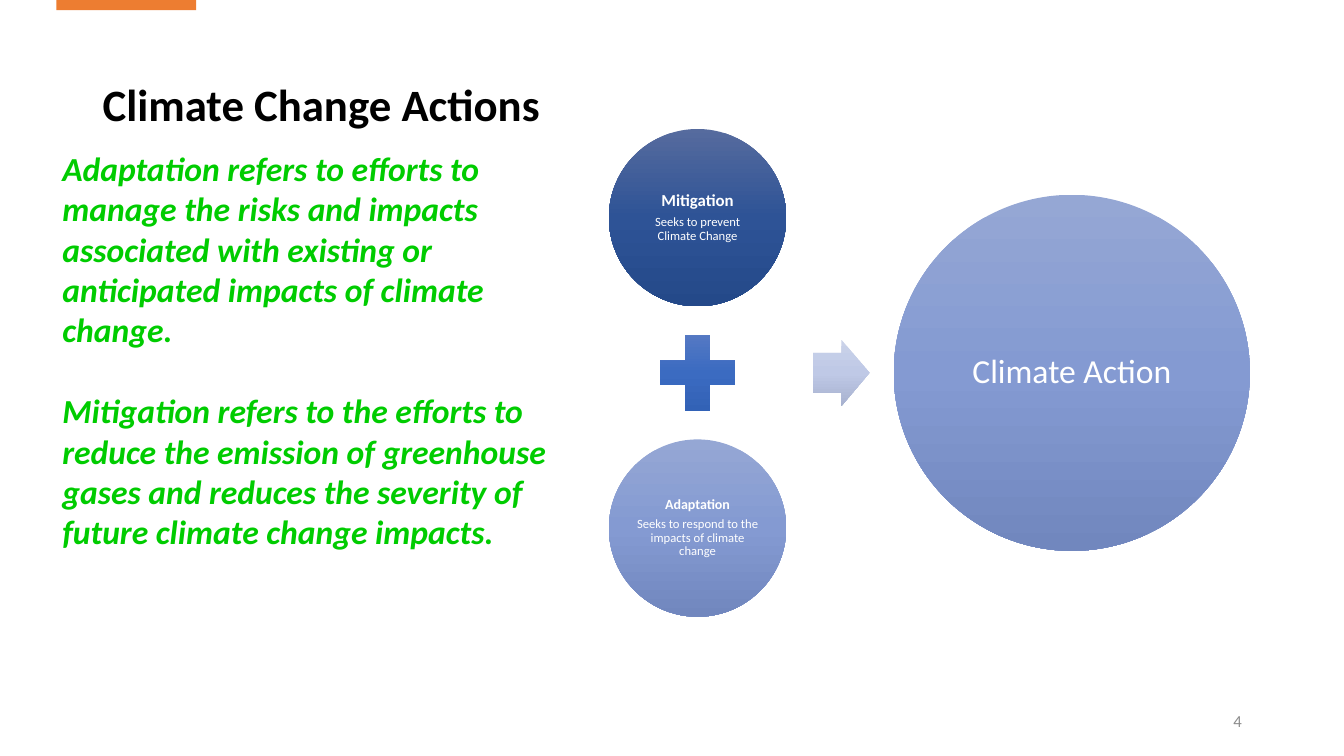
from copy import deepcopy

from pptx import Presentation
from pptx.dml.color import RGBColor as RGB
from pptx.enum.shapes import MSO_SHAPE as SHAPE
from pptx.enum.text import MSO_ANCHOR as ANCHOR, PP_ALIGN as ALIGN
from pptx.oxml.ns import qn
from pptx.util import Inches, Pt

COLORS = {
    "bar": "ED7D31", "title": "000000", "body": "00CC00",
    "number": "8C8C8C", "label": "FFFFFF",
}
# Gradient stops from top to bottom
GRADIENTS = {
    "navy": ("566B9E", "2E5396", "244989"),
    "blue": ("5E7EC4", "3B6BC1", "2F5EB1"),
    "light": ("95A7D4", "849AD2", "7187BE"),
    "pale": ("CAD2E9", "BFC9E6", "A7B1CF"),
}

prs = Presentation()
prs.slide_width, prs.slide_height = Inches(13.33), Inches(7.5)
s = prs.slides.add_slide(prs.slide_layouts[6])
U = prs.slide_width / 100  # square grid: 100 columns, about 56 rows


def cells(*values):
    return [round(v * U) for v in values]


def write(tf, lines, color, align=ALIGN.LEFT, anchor=ANCHOR.MIDDLE,
          spacing=None, italic=False):
    """Fill a text frame with (text, size, bold, space before) lines."""
    tf.word_wrap = True
    tf.vertical_anchor = anchor
    for i, (text, size, bold, before) in enumerate(lines):
        p = tf.add_paragraph() if i else tf.paragraphs[0]
        p.text = text
        p.alignment = align
        p.line_spacing = spacing
        p.space_before = Pt(before)
        p.font.name, p.font.size = "Calibri", Pt(size)
        p.font.bold, p.font.italic = bold, italic
        p.font.color.rgb = RGB.from_string(COLORS[color])


# Accent bar at the top edge
sp = s.shapes.add_shape(SHAPE.RECTANGLE, *cells(4.2, 0, 10.4, 0.75))
sp.shadow.inherit = False
sp.fill.solid()
sp.fill.fore_color.rgb = RGB.from_string(COLORS["bar"])
sp.line.fill.background()

# Title, page number and definitions
title = s.shapes.add_textbox(*cells(6.9, 4.12, 86.25, 7.65))
write(title.text_frame, [("Climate Change Actions", 32, True, 0)], "title", spacing=0.9)

number = s.shapes.add_textbox(*cells(70.65, 52.12, 22.5, 3))
write(number.text_frame, [("4", 12, False, 0)], "number", ALIGN.RIGHT)

body = s.shapes.add_textbox(*cells(3.9, 10.65, 40.4, 38.2))
write(body.text_frame, [
    ("Adaptation refers to efforts to manage the risks and impacts associated with "
     "existing or anticipated impacts of climate change.", 24, True, 0),
    ("Mitigation refers to the efforts to reduce the emission of greenhouse gases and "
     "reduces the severity of future climate change impacts.", 24, True, 29),
], "body", anchor=ANCHOR.TOP, italic=True)

# Diagram: two parts add up to the action, all centred on one axis
AXIS, STEP = 27.75, 11.55
PARTS_X, ARROW_X, ACTION_X = 51.9, 62.6, 79.75
PART, ACTION = 13.2, 26.5
diagram = [  # preset, centre x, centre y, width, height, gradient, label lines
    (SHAPE.OVAL, PARTS_X, AXIS - STEP, PART, PART, "navy",
     [("Mitigation", 12, True, 0), ("Seeks to prevent Climate Change", 9, False, 4)]),
    (SHAPE.MATH_PLUS, PARTS_X, AXIS, 7.65, 7.65, "blue", []),
    (SHAPE.OVAL, PARTS_X, AXIS + STEP, PART, PART, "light",
     [("Adaptation", 10, True, 0),
      ("Seeks to respond to the impacts of climate change", 9, False, 3.5)]),
    (SHAPE.RIGHT_ARROW, ARROW_X, AXIS, 4.2, 4.95, "pale", []),
    (SHAPE.OVAL, ACTION_X, AXIS, ACTION, ACTION, "light",
     [("Climate Action", 24, False, 0)]),
]
for preset, x, y, w, h, gradient, lines in diagram:
    sp = s.shapes.add_shape(preset, *cells(x - w / 2, y - h / 2, w, h))
    sp.shadow.inherit = False
    sp.line.fill.background()
    if preset == SHAPE.RIGHT_ARROW:
        sp.adjustments[0] = 0.6

    # Three-stop gradient running downwards
    sp.fill.gradient()
    sp.fill.gradient_angle = 270
    stops = sp._element.spPr.find(qn("a:gradFill")).find(qn("a:gsLst"))
    stops.append(deepcopy(stops[0]))
    for i, stop in enumerate(sp.fill.gradient_stops):
        stop.position = i / 2
        stop.color.rgb = RGB.from_string(GRADIENTS[gradient][i])

    if lines:
        tf = sp.text_frame
        tf.margin_left = tf.margin_right = tf.margin_top = tf.margin_bottom = Inches(0.02)
        write(tf, lines, "label", ALIGN.CENTER, spacing=0.9)

prs.save("out.pptx")
